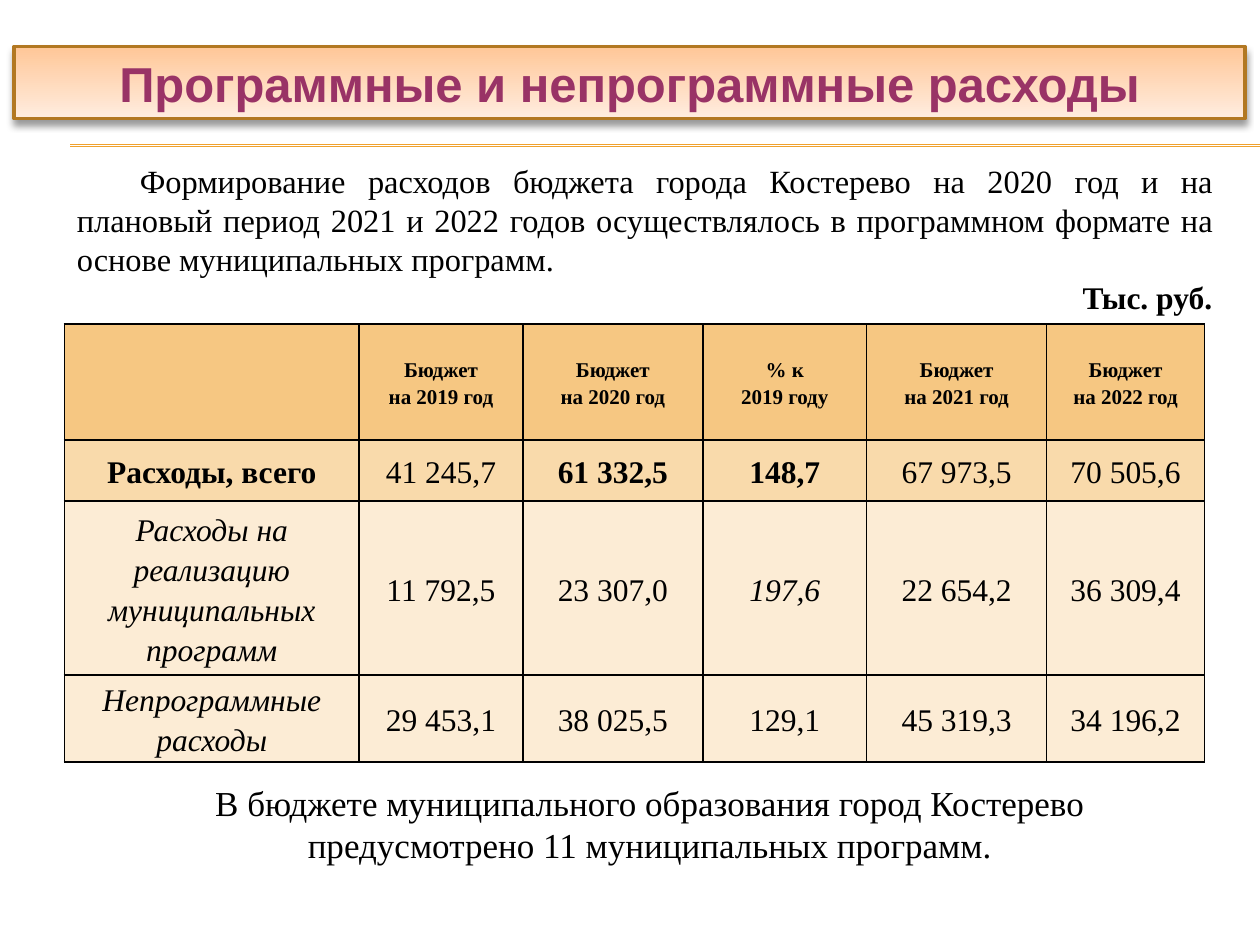
from dataclasses import dataclass

from lxml import etree
from pptx import Presentation
from pptx import util as u
from pptx.dml.color import RGBColor
from pptx.enum import shapes, text
from pptx.oxml import parse_xml
from pptx.oxml.ns import nsdecls, qn

COLORS = {
    "ink": "000000", "title": "993366", "frame": "B27822", "rule": "F0A22E",
    "peach": "FFC798", "cream": "FFEDE0",
    "header": "F6C782", "total": "F9DAAB", "detail": "FCECD5",
}
SERIF = "Times New Roman"
ALIGN = text.PP_ALIGN


@dataclass
class Box:
    left: float
    top: float
    width: float
    height: float

    def lengths(self) -> list:
        return [u.Cm(v) for v in (self.left, self.top, self.width, self.height)]


@dataclass
class Line:
    words: str
    size: float
    align: ALIGN
    bold: bool = False
    first_indent: float = 0


@dataclass
class Row:
    cells: list[str]
    height: float
    fill: str
    size: float = 18
    bold: tuple = ()
    italic: tuple = ()


TITLE_BOX = Box(0.28, 0.94, 24.82, 1.45)
INTRO_BOX = Box(1.3, 3.12, 23.39, 4.17)
TABLE_BOX = Box(1.3, 6.53, 22.98, 8.83)
SUMMARY_BOX = Box(1.9, 15.62, 22.4, 1.96)

INTRO = [
    Line("Формирование расходов бюджета города Костерево на 2020 год и на плановый "
         "период 2021 и 2022 годов осуществлялось в программном формате на основе "
         "муниципальных программ.", 18.5, ALIGN.JUSTIFY, first_indent=1.27),
    Line("Тыс. руб.", 18, ALIGN.RIGHT, bold=True),
]
SUMMARY = [
    Line("В бюджете муниципального образования город Костерево предусмотрено "
         "11 муниципальных программ.", 20, ALIGN.CENTER),
]
COLUMN_WIDTHS = [5.94, 3.3, 3.63, 3.3, 3.63, 3.18]
BUDGET = [
    Row(["", "Бюджет\nна 2019 год", "Бюджет\nна 2020 год", "% к\n2019 году",
         "Бюджет\nна 2021 год", "Бюджет\nна 2022 год"],
        2.34, "header", size=12, bold=tuple(range(6))),
    Row(["Расходы, всего", "41 245,7", "61 332,5", "148,7", "67 973,5", "70 505,6"],
        1.23, "total", bold=(0, 2, 3)),
    Row(["Расходы на реализацию муниципальных программ", "11 792,5", "23 307,0",
         "197,6", "22 654,2", "36 309,4"], 3.51, "detail", italic=(0, 3)),
    Row(["Непрограммные расходы", "29 453,1", "38 025,5", "129,1", "45 319,3",
         "34 196,2"], 1.75, "detail", italic=(0,)),
]


def rgb(name: str) -> RGBColor:
    return RGBColor.from_string(COLORS[name])


def format_font(font, color: str = "ink", **values) -> None:
    for attribute, value in values.items():
        setattr(font, attribute, value)
    font.color.rgb = rgb(color)


def add_title(slide, words: str) -> None:
    title = slide.shapes.title
    title.left, title.top, title.width, title.height = TITLE_BOX.lengths()
    title.fill.gradient()
    title.fill.gradient_angle = 270
    for stop, color in zip(title.fill.gradient_stops, ("peach", "cream")):
        stop.color.rgb = rgb(color)
    title.line.color.rgb = rgb("frame")
    title.line.width = u.Pt(2)
    title._element.spPr.append(parse_xml(
        f'<a:effectLst {nsdecls("a")}><a:outerShdw blurRad="{u.Pt(4)}" dist="{u.Pt(3)}" '
        f'dir="5400000" rotWithShape="0"><a:srgbClr val="{COLORS["ink"]}">'
        '<a:alpha val="40000"/></a:srgbClr></a:outerShdw></a:effectLst>'))
    frame = title.text_frame
    frame.text = words
    frame.auto_size = text.MSO_AUTO_SIZE.NONE
    frame.vertical_anchor = text.MSO_ANCHOR.MIDDLE
    frame.paragraphs[0].alignment = ALIGN.CENTER
    format_font(frame.paragraphs[0].runs[0].font, "title",
                name="Arial", size=u.Pt(28), bold=True)


def add_rule(slide, top: float) -> None:
    rule = slide.shapes.add_connector(
        shapes.MSO_CONNECTOR.STRAIGHT, u.Cm(1.42), u.Cm(top), u.Cm(25.4), u.Cm(top))
    rule.line.color.rgb = rgb("rule")
    rule.line.width = u.Pt(0.75)
    etree.SubElement(rule._element.spPr, qn("a:effectLst"))


def add_text(slide, box: Box, lines: list[Line]) -> None:
    frame = slide.shapes.add_textbox(*box.lengths()).text_frame
    frame.word_wrap = True
    frame.auto_size = text.MSO_AUTO_SIZE.SHAPE_TO_FIT_TEXT
    for index, line in enumerate(lines):
        paragraph = frame.add_paragraph() if index else frame.paragraphs[0]
        paragraph.alignment = line.align
        paragraph._p.get_or_add_pPr().set("indent", str(u.Cm(line.first_indent)))
        run = paragraph.add_run()
        run.text = line.words
        format_font(run.font, name=SERIF, size=u.Pt(line.size), bold=line.bold)


def add_borders(cell) -> None:
    properties = cell._tc.get_or_add_tcPr()
    for index, side in enumerate(("lnL", "lnR", "lnT", "lnB")):
        properties.insert(index, parse_xml(
            f'<a:{side} {nsdecls("a")} w="{u.Pt(1)}"><a:solidFill>'
            f'<a:srgbClr val="{COLORS["ink"]}"/></a:solidFill></a:{side}>'))


def fill_cell(cell, row: Row, column: int) -> None:
    layout = {
        "margin_left": u.Cm(0.18), "margin_right": u.Cm(0.18),
        "margin_top": 0, "margin_bottom": 0,
        "vertical_anchor": text.MSO_ANCHOR.MIDDLE,
    }
    for attribute, value in layout.items():
        setattr(cell, attribute, value)
    cell.fill.solid()
    cell.fill.fore_color.rgb = rgb(row.fill)
    add_borders(cell)
    cell.text_frame.text = row.cells[column]
    for paragraph in cell.text_frame.paragraphs:
        paragraph.alignment = ALIGN.CENTER
        paragraph.line_spacing = 1.15
        for run in paragraph.runs:
            format_font(run.font, name=SERIF, size=u.Pt(row.size),
                        bold=column in row.bold, italic=column in row.italic)


def add_budget(slide) -> None:
    table = slide.shapes.add_table(
        len(BUDGET), len(COLUMN_WIDTHS), *TABLE_BOX.lengths()).table
    table.first_row = table.horz_banding = False
    for column, width in zip(table.columns, COLUMN_WIDTHS):
        column.width = u.Cm(width)
    for table_row, row in zip(table.rows, BUDGET):
        table_row.height = u.Cm(row.height)
        for column, cell in enumerate(table_row.cells):
            fill_cell(cell, row, column)


def main() -> None:
    deck = Presentation()
    deck.slide_width, deck.slide_height = u.Cm(25.4), u.Cm(19.05)
    slide = deck.slides.add_slide(deck.slide_layouts.get_by_name("Title Only"))
    for top in (2.92, 2.95):
        add_rule(slide, top)
    add_text(slide, INTRO_BOX, INTRO)
    add_budget(slide)
    add_title(slide, "Программные и непрограммные расходы")
    add_text(slide, SUMMARY_BOX, SUMMARY)
    deck.save("out.pptx")


if __name__ == "__main__":
    main()
